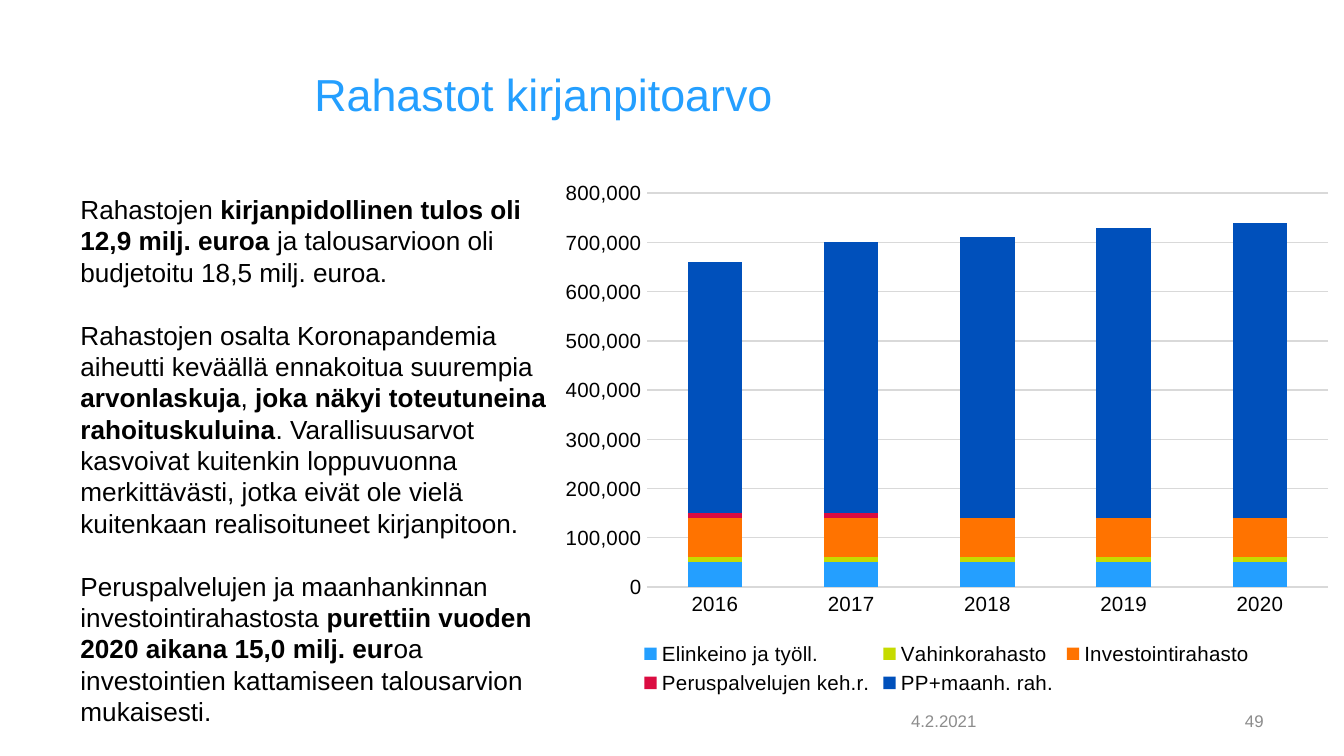
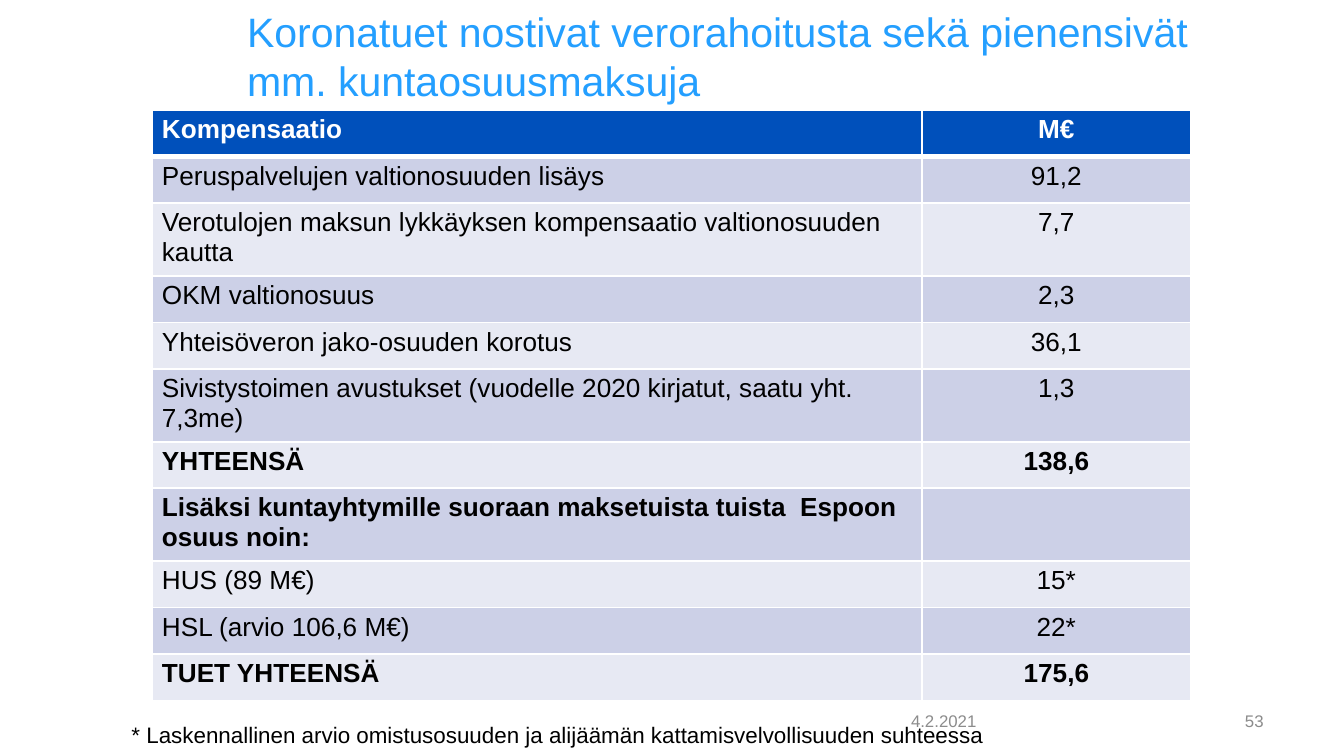
from lxml.etree import SubElement
from pptx import Presentation
from pptx.chart.data import CategoryChartData
from pptx.dml.color import RGBColor
from pptx.enum.chart import XL_CHART_TYPE, XL_LEGEND_POSITION, XL_TICK_MARK
from pptx.enum.text import MSO_ANCHOR, MSO_AUTO_SIZE, PP_ALIGN
from pptx.oxml import parse_xml
from pptx.oxml.ns import nsdecls, qn
from pptx.util import Inches, Pt

# Content: text between ** marks is bold
DATE = "4.2.2021"

FUNDS_TITLE = "Rahastot kirjanpitoarvo"
FUNDS_TEXT = [
    "Rahastojen **kirjanpidollinen tulos oli 12,9 milj. euroa **ja talousarvioon oli "
    "budjetoitu 18,5 milj. euroa.",
    "Rahastojen osalta Koronapandemia aiheutti keväällä ennakoitua suurempia "
    "**arvonlaskuja**, **joka näkyi toteutuneina rahoituskuluina**. Varallisuusarvot "
    "kasvoivat kuitenkin loppuvuonna merkittävästi, jotka eivät ole vielä kuitenkaan "
    "realisoituneet kirjanpitoon.",
    "Peruspalvelujen ja maanhankinnan investointirahastosta **purettiin vuoden 2020 "
    "aikana 15,0 milj. eur**oa investointien kattamiseen talousarvion mukaisesti.",
]
YEARS = ["2016", "2017", "2018", "2019", "2020"]
FUNDS = [
    ("Elinkeino ja työll.", "249FFF", [50000] * 5),
    ("Vahinkorahasto", "C6DB00", [10000] * 5),
    ("Investointirahasto", "FF7300", [80000] * 5),
    ("Peruspalvelujen keh.r.", "DB0C41", [10000, 10000, 0, 0, 0]),
    ("PP+maanh. rah.", "0050BB", [510000, 550000, 570000, 590000, 600000]),
]

SUPPORT_TITLE = "Koronatuet nostivat verorahoitusta sekä pienensivät mm. kuntaosuusmaksuja"
SUPPORT_ROWS = [
    ("**Kompensaatio**", "**M€**"),
    ("Peruspalvelujen valtionosuuden lisäys", "91,2"),
    ("Verotulojen maksun lykkäyksen kompensaatio valtionosuuden kautta", "7,7"),
    ("OKM valtionosuus", "2,3"),
    ("Yhteisöveron jako-osuuden korotus", "36,1"),
    ("Sivistystoimen avustukset (vuodelle 2020 kirjatut, saatu yht. 7,3me)", "1,3"),
    ("**YHTEENSÄ**", "**138,6**"),
    ("**Lisäksi kuntayhtymille suoraan maksetuista tuista  Espoon osuus noin:**", ""),
    ("HUS (89 M€)", "15*"),
    ("HSL (arvio 106,6 M€)", "22*"),
    ("**TUET YHTEENSÄ**", "**175,6**"),
]
SUPPORT_NOTE = ("* Laskennallinen arvio omistusosuuden ja alijäämän "
                "kattamisvelvollisuuden suhteessa")

# Shared style; the 16:9 slide has a grid of 100 columns, with square cells
FONT = "Arial"
BLACK, WHITE, GREY, GRID_GREY = "000000", "FFFFFF", "8C8C8C", "D9D9D9"
TITLE_BLUE, HEADER_BLUE = "249FFF", "0050BB"
BANDS = ("E7E9F3", "CCD0E7")
COLUMNS = 100
ROWS = COLUMNS * 9 / 16
CHARACTERS_PER_LINE = 60


def grid(*units):
    return [Inches(unit / 10) for unit in units]


def color(value):
    return RGBColor.from_string(value)


def set_font(font, size, value=BLACK):
    font.name = FONT
    font.size = Pt(size)
    font.color.rgb = color(value)


def write(frame, paragraphs, size=14, value=BLACK, align=PP_ALIGN.LEFT, gap=0):
    for index, text in enumerate(paragraphs):
        paragraph = frame.add_paragraph() if index else frame.paragraphs[0]
        paragraph.alignment = align
        if index:
            paragraph.space_before = Pt(gap)
        set_font(paragraph.font, size, value)
        for part, words in enumerate(text.split("**")):
            if words:
                run = paragraph.add_run()
                run.text = words
                set_font(run.font, size, value)
                run.font.bold = part % 2 == 1


def add_text(slide, box, paragraphs, anchor=MSO_ANCHOR.TOP, wrap=True, **style):
    frame = slide.shapes.add_textbox(*grid(*box)).text_frame
    frame.word_wrap = wrap
    frame.vertical_anchor = anchor
    if not wrap:
        frame.auto_size = MSO_AUTO_SIZE.SHAPE_TO_FIT_TEXT
    write(frame, paragraphs, **style)


def add_slide(presentation, title, title_box, title_size, number):
    slide = presentation.slides.add_slide(presentation.slide_layouts[6])
    add_text(slide, title_box, [title], size=title_size, value=TITLE_BLUE)
    footer = {"anchor": MSO_ANCHOR.MIDDLE, "size": 9, "value": GREY}
    add_text(slide, (66.8, 52.1, 13.9, 3), [DATE], **footer)
    add_text(slide, (83.9, 52.1, 11.1, 3), [number], align=PP_ALIGN.RIGHT, **footer)
    return slide


def add_funds_chart(slide, box):
    data = CategoryChartData(number_format="#,##0")
    data.categories = YEARS
    for name, _, values in FUNDS:
        data.add_series(name, values)
    chart = slide.shapes.add_chart(
        XL_CHART_TYPE.COLUMN_STACKED, *grid(*box), data).chart
    chart.has_title = False
    set_font(chart.font, 10)

    # Bars
    plot = chart.plots[0]
    plot.gap_width, plot.overlap = 150, 100
    plot.vary_by_categories = False
    for series, (_, fill, _) in zip(plot.series, FUNDS):
        series.format.fill.solid()
        series.format.fill.fore_color.rgb = color(fill)

    # Axes and legend
    years, amounts = chart.category_axis, chart.value_axis
    for axis in (years, amounts):
        axis.major_tick_mark = axis.minor_tick_mark = XL_TICK_MARK.NONE
        set_font(axis.tick_labels.font, 11)
    amounts.has_major_gridlines = True
    for line in (years.format.line, amounts.major_gridlines.format.line):
        line.color.rgb = color(GRID_GREY)
        line.width = Pt(0.75)
    amounts.format.line.fill.background()
    amounts.tick_labels.number_format = "#,##0"
    amounts.tick_labels.number_format_is_linked = False
    chart.has_legend = True
    chart.legend.position = XL_LEGEND_POSITION.BOTTOM
    chart.legend.include_in_layout = False
    set_font(chart.legend.font, 11)


def set_borders(cell, widths):
    properties = cell._tc.get_or_add_tcPr()
    for index, (side, width) in enumerate(widths.items()):
        line = parse_xml(f'<a:ln{side} {nsdecls("a")} w="{Pt(width)}"/>')
        fill = SubElement(line, qn("a:solidFill"))
        SubElement(fill, qn("a:srgbClr")).set("val", WHITE)
        properties.insert(index, line)


def add_support_table(slide, left, top, widths):
    heights = [5.25 if len(label.strip("*")) > CHARACTERS_PER_LINE else 3.46
               for label, _ in SUPPORT_ROWS]
    table = slide.shapes.add_table(
        len(heights), len(widths),
        *grid(left, top, sum(widths), sum(heights))).table
    for column, width in zip(table.columns, grid(*widths)):
        column.width = width
    for row, height in zip(table.rows, grid(*heights)):
        row.height = height
    for row_index, texts in enumerate(SUPPORT_ROWS):
        header = row_index == 0
        for column_index, text in enumerate(texts):
            cell = table.cell(row_index, column_index)
            cell.margin_left = cell.margin_right = Pt(5.4)
            cell.margin_top = cell.margin_bottom = Pt(2.7)
            cell.fill.solid()
            cell.fill.fore_color.rgb = color(
                HEADER_BLUE if header else BANDS[row_index % 2])
            set_borders(cell, {"L": 1, "R": 1, "T": 3 if row_index == 1 else 1,
                               "B": 3 if header else 1})
            write(cell.text_frame, [text], value=WHITE if header else BLACK,
                  align=PP_ALIGN.CENTER if column_index else PP_ALIGN.LEFT)


def main():
    presentation = Presentation()
    presentation.slide_width, presentation.slide_height = grid(COLUMNS, ROWS)

    # Fund values
    slide = add_slide(presentation, FUNDS_TITLE, (22.4, 4.5, 72.6, 9.4), 24, "49")
    add_funds_chart(slide, (40.9, 12.7, 59.1, 39.4))
    add_text(slide, (5, 13.9, 36.9, 41.1), FUNDS_TEXT, gap=16.8)

    # Support payments
    slide = add_slide(presentation, SUPPORT_TITLE, (17.4, 0, 74.4, 9.4), 22, "53")
    add_support_table(slide, 11.3, 8.2, (57.3, 20))
    add_text(slide, (8.8, 53.2, 65.8, 3), [SUPPORT_NOTE], wrap=False, size=12)

    presentation.save("out.pptx")


if __name__ == "__main__":
    main()
